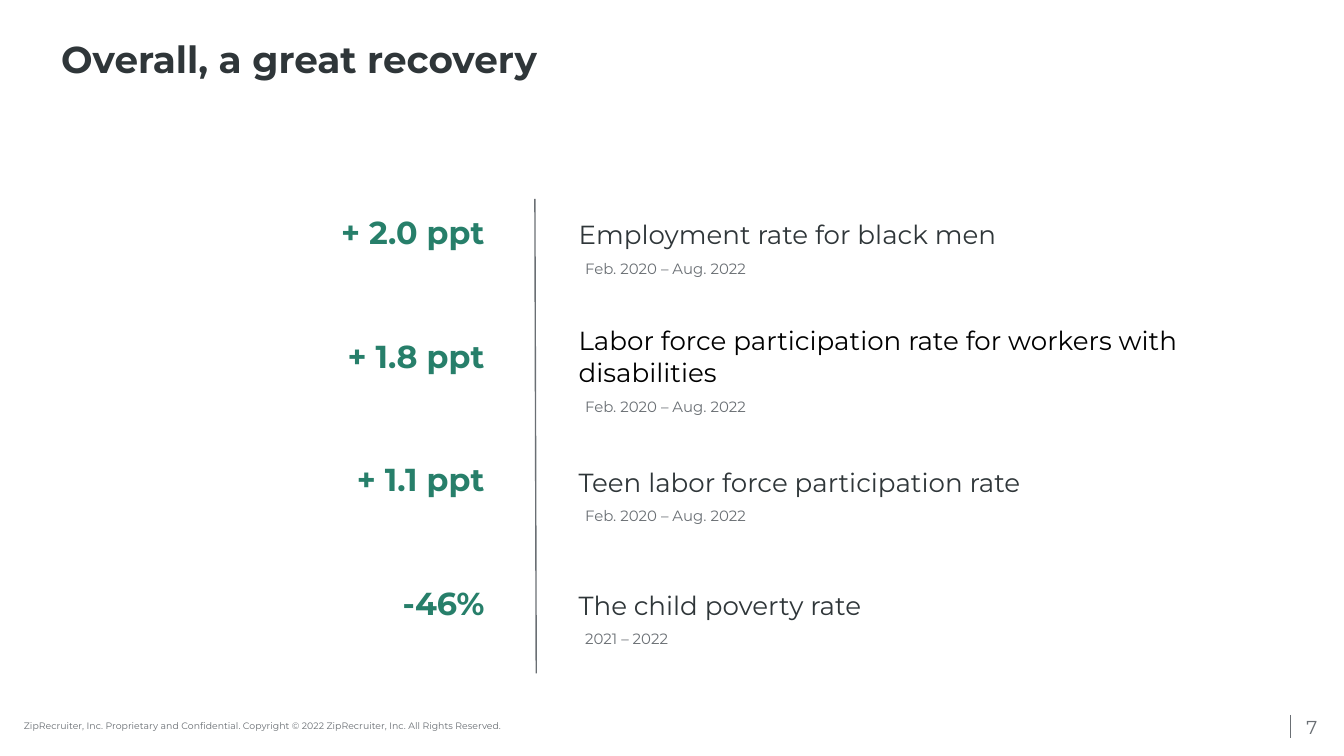
import pptx
import pptx.dml.color
import pptx.enum.shapes
import pptx.enum.text
import pptx.oxml
import pptx.oxml.ns
import pptx.util

PX = 4572
COLORS = {"ink": "2F3639", "black": "000000", "green": "277F6A", "gray": "6A6F74", "white": "FFFFFF"}
ALIGN = pptx.enum.text.PP_ALIGN
MIDDLE = pptx.enum.text.MSO_ANCHOR.MIDDLE
TOP = pptx.enum.text.MSO_ANCHOR.TOP
FIT = pptx.enum.text.MSO_AUTO_SIZE
SPACED = {"line_spacing": 1.15, "space_after": pptx.util.Pt(10)}
ROW_HEIGHT = 184
INDICATORS = [
    ("+ 2.0 ppt", "Employment rate for black men", "ink", SPACED, "Feb. 2020 – Aug. 2022", 118),
    ("+ 1.8 ppt", "Labor force participation rate for workers with disabilities", "black", {},
     "Feb. 2020 – Aug. 2022", 323),
    ("+ 1.1 ppt", "Teen labor force participation rate", "ink", SPACED, "Feb. 2020 – Aug. 2022", 485),
    ("-46%", "The child poverty rate", "ink", SPACED, "2021 – 2022", 668),
]


def emu(*lengths):
    """Turn px lengths into EMU."""
    return [length * PX for length in lengths]


def rgb(color):
    """Look up a named colour."""
    return pptx.dml.color.RGBColor.from_string(COLORS[color])


def apply(target, values):
    """Set each attribute in values on target."""
    for name, value in values.items():
        setattr(target, name, value)


def write(frame, text, size, color, bold=False, inset=20, layout=None, **paragraph_format):
    """Fill a text frame or cell with one formatted paragraph."""
    margins = {f"margin_{side}": inset * PX for side in ("left", "top", "right", "bottom")}
    apply(frame, {**margins, **(layout or {})})
    text_frame = getattr(frame, "text_frame", frame)
    text_frame.text = text
    paragraph = text_frame.paragraphs[0]
    apply(paragraph, paragraph_format)
    font = paragraph.runs[0].font
    apply(font, {"name": "Montserrat", "size": pptx.util.Pt(size), "bold": bold})
    font.color.rgb = rgb(color)
    return paragraph


def add_text(slide, box, text, size, color, anchor=TOP, auto_size=FIT.NONE, **text_format):
    """Add a wrapped text box."""
    frame = slide.shapes.add_textbox(*emu(*box)).text_frame
    layout = {"word_wrap": True, "vertical_anchor": anchor, "auto_size": auto_size}
    write(frame, text, size, color, layout=layout, **text_format)


def add_rule(slide, x1, y1, x2, y2):
    """Draw a thin gray line."""
    rule = slide.shapes.add_connector(pptx.enum.shapes.MSO_CONNECTOR.STRAIGHT, *emu(x1, y1, x2, y2))
    rule.line.color.rgb = rgb("gray")
    rule.line.width = pptx.util.Pt(0.75)
    rule._element.spPr.append(pptx.oxml.parse_xml(f'<a:effectLst {pptx.oxml.ns.nsdecls("a")}/>'))


def style_cell(cell):
    """Give a cell white borders and no fill."""
    properties = cell._tc.get_or_add_tcPr()
    for edge in ("lnL", "lnR", "lnT", "lnB"):
        properties.append(pptx.oxml.parse_xml(
            f'<a:{edge} {pptx.oxml.ns.nsdecls("a")} w="9525"><a:solidFill>'
            f'<a:srgbClr val="{COLORS["white"]}"/></a:solidFill></a:{edge}>'))
    cell.fill.background()


def add_title(slide, box):
    """Place the slide title."""
    title = slide.shapes.title
    apply(title, dict(zip(("left", "top", "width", "height"), emu(*box))))
    layout = {"word_wrap": True, "vertical_anchor": TOP, "auto_size": FIT.NONE}
    write(title.text_frame, "Overall, a great recovery", 20, "ink", True, 0, layout, alignment=ALIGN.LEFT)


def add_indicators(slide, box):
    """Place the table of changes, its divider and the periods."""
    left, top, width, height = box
    table = slide.shapes.add_table(len(INDICATORS), 2, *emu(*box)).table
    apply(table, {"first_row": False, "horz_banding": False})
    change_width = 532
    for column, column_width in zip(table.columns, (change_width, width - change_width)):
        column.width = column_width * PX
    for row, (change, indicator, color, spacing, period, offset) in enumerate(INDICATORS):
        table.rows[row].height = ROW_HEIGHT * PX
        change_cell, indicator_cell = table.cell(row, 0), table.cell(row, 1)
        layout = {"vertical_anchor": MIDDLE}
        write(change_cell, change, 17, "green", True, layout=layout, alignment=ALIGN.RIGHT)
        paragraph = write(indicator_cell, indicator, 14, color, layout=layout, **spacing)
        properties = paragraph._p.get_or_add_pPr()
        for name, indent in {"marL": 100, "indent": 0}.items():
            properties.set(name, str(indent * PX))
        for cell in (change_cell, indicator_cell):
            style_cell(cell)
        add_text(slide, (left + 642, top + offset, 586, 68), period, 8, "gray",
                 auto_size=FIT.SHAPE_TO_FIT_TEXT)
    add_rule(slide, left + 587, top + 41, left + 589, top + height + 11)


def add_footer(slide, box):
    """Place the copyright line and the page number."""
    left, top, width, height = box
    add_text(slide, (left + 16, top, 986, height),
             "ZipRecruiter, Inc. Proprietary and Confidential. Copyright © 2022 ZipRecruiter, Inc. All Rights Reserved.",
             5, "gray", MIDDLE, line_spacing=1.15)
    number_left = left + width - 80
    add_rule(slide, number_left, top + 31, number_left, top + 66)
    add_text(slide, (number_left, top + 21, 64, 56), "7", 10, "gray", MIDDLE, inset=0, alignment=ALIGN.CENTER)


def main():
    """Build and save the recovery slide."""
    deck = pptx.Presentation()
    deck.slide_width, deck.slide_height = emu(2000, 1125)
    slide = deck.slides.add_slide(deck.slide_layouts.get_by_name("Title Only"))
    add_footer(slide, (0, 1033, 2000, 92))
    add_title(slide, (91, 54, 1818, 134))
    add_indicators(slide, (209, 255, 1582, ROW_HEIGHT * len(INDICATORS)))
    deck.save("out.pptx")


if __name__ == "__main__":
    main()
